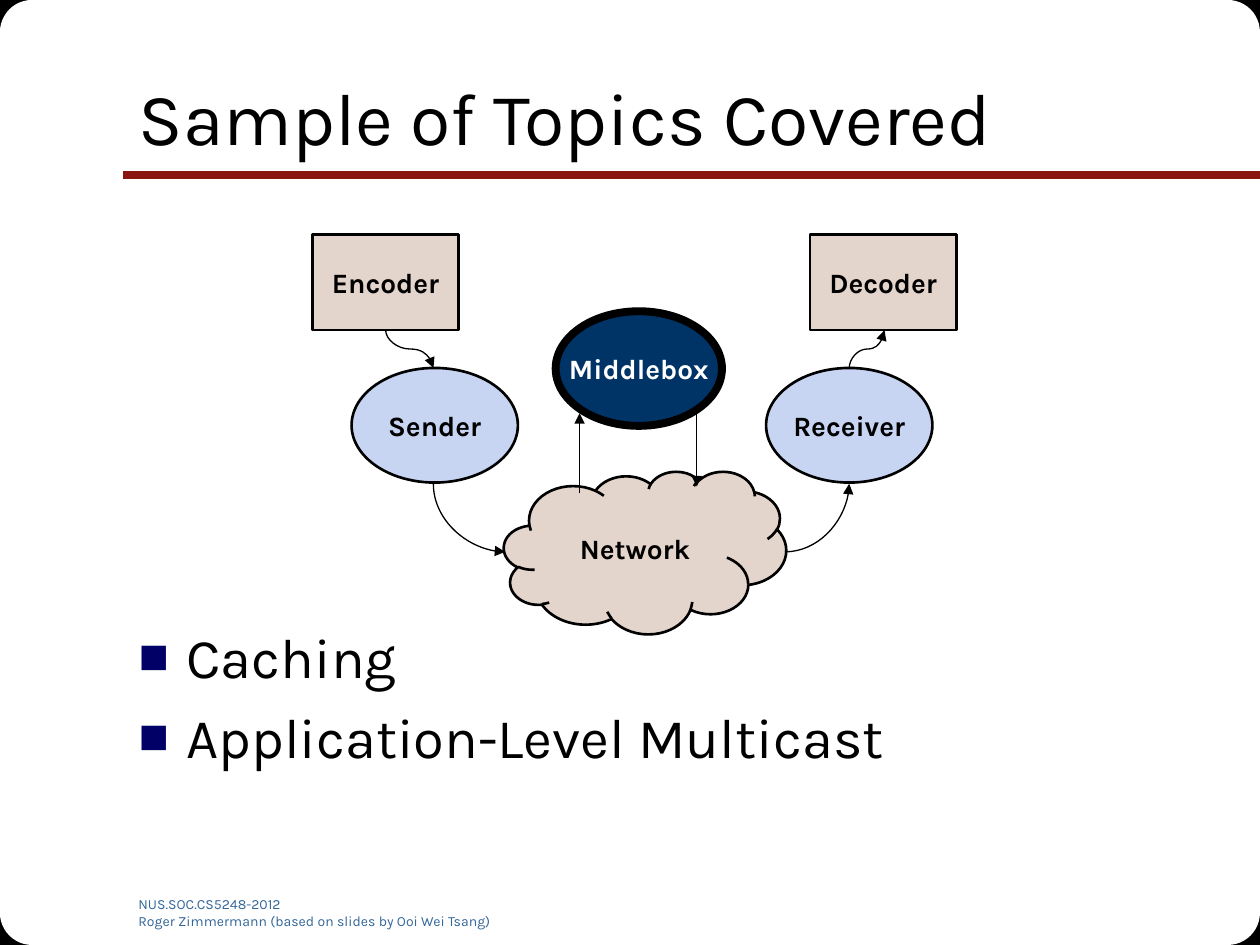
from itertools import product

from lxml.etree import SubElement
from pptx import Presentation
from pptx.dml.color import RGBColor as RGB
from pptx.enum.shapes import MSO_CONNECTOR as CONN, MSO_SHAPE as SHAPE
from pptx.enum.text import MSO_ANCHOR as ANCHOR, MSO_AUTO_SIZE as FIT, PP_ALIGN as ALIGN
from pptx.oxml.ns import qn
from pptx.util import Inches, Pt

W, H = 10, 7.5
LEFT = W * 0.1
FONT = "Karla"
COLORS = {
    "black": "000000", "white": "FFFFFF", "rule": "891411", "footer": "336699",
    "bullet": "000066", "sand": "E3D4CC", "sky": "C7D5F2", "navy": "003366",
}
BOX = (1.16, 0.76)
OVAL = (1.32, 0.91)
CLOUD = (2.24, 1.29)


def color(name):
    return RGB.from_string(COLORS[name])


def place(sp, x, y, w, h):
    sp.left, sp.top, sp.width, sp.height = map(Inches, (x, y, w, h))


def add_run(p, text, size, ink="black", bold=False):
    r = p.add_run()
    r.text = text
    r.font.name, r.font.size, r.font.bold = FONT, Pt(size), bold
    r.font.color.rgb = color(ink)


def add_shape(s, kind, x, y, w, h, fill, line=None):
    sp = s.shapes.add_shape(kind, *map(Inches, (x, y, w, h)))
    sp.shadow.inherit = False
    sp.fill.solid()
    sp.fill.fore_color.rgb = color(fill)
    if line:
        sp.line.color.rgb = color("black")
        sp.line.width = Pt(line)
    else:
        sp.line.fill.background()
    return sp


def add_node(s, kind, x, y, size, text, fill, ink="black", line=1.5):
    sp = add_shape(s, kind, x, y, *size, fill, line)
    tf = sp.text_frame
    tf.word_wrap = kind == SHAPE.CLOUD
    tf.vertical_anchor = ANCHOR.MIDDLE
    p = tf.paragraphs[0]
    p.alignment = ALIGN.CENTER
    add_run(p, text, 16, ink, bold=True)


def add_line(s, start, end, kind=CONN.STRAIGHT, ink="black", width=0.75, arrow=True):
    c = s.shapes.add_connector(kind, *map(Inches, (*start, *end)))
    c.line.color.rgb = color(ink)
    c.line.width = Pt(width)
    if arrow:
        SubElement(c.line._get_or_add_ln(), qn("a:tailEnd"), type="triangle")
    SubElement(c._element.spPr, qn("a:effectLst"))
    return c


def add_curve(s, start, end, preset, upright=True):
    """Curved arrow; an upright one leaves its start vertically."""
    if upright:
        # Lay the span on its side, then turn it back by 270 degrees
        (x1, y1), (x2, y2) = start, end
        cx, cy = (x1 + x2) / 2, (y1 + y2) / 2
        dx, dy = (y1 - y2) / 2, (x2 - x1) / 2
        start, end = (cx - dx, cy - dy), (cx + dx, cy + dy)
    c = add_line(s, start, end, CONN.CURVE)
    c._element.spPr.find(qn("a:prstGeom")).set("prst", preset)
    if upright:
        c._element.spPr.find(qn("a:xfrm")).set("rot", str(270 * 60000))


def add_frame(s):
    # Black corners, softened by white rounded squares
    for kind, side, fill, line in ((SHAPE.RECTANGLE, 0.43, "black", 0.75),
                                   (SHAPE.ROUNDED_RECTANGLE, 1.53, "white", None)):
        for x, y in product((0, W - side), (0, H - side)):
            add_shape(s, kind, x, y, side, side, fill, line)
    add_line(s, (W, 1.39), (0.98, 1.39), ink="rule", width=4.5, arrow=False)


def add_footer(s, lines):
    tf = s.shapes.add_textbox(*map(Inches, (LEFT, 7.06, 3.08, 0.28))).text_frame
    tf.word_wrap = True
    for i, text in enumerate(lines):
        p = tf.add_paragraph() if i else tf.paragraphs[0]
        add_run(p, text, 8, "footer")


def set_title(s, text):
    sp = s.shapes.title
    place(sp, LEFT, 0.3, W * 0.85, 1.25)
    s.shapes._spTree.append(sp._element)  # above the frame
    tf = sp.text_frame
    tf.auto_size, tf.vertical_anchor = FIT.NONE, ANCHOR.MIDDLE
    tf.paragraphs[0].alignment = ALIGN.LEFT
    add_run(tf.paragraphs[0], text, 42)


def set_list(s, items):
    sp = s.placeholders[1]
    place(sp, LEFT, 1.75, W * 0.85, 5.15)
    s.shapes._spTree.append(sp._element)
    tf = sp.text_frame
    tf.auto_size = FIT.NONE
    tf.margin_top = Inches(3.19)  # room for the diagram
    for i, text in enumerate(items):
        p = tf.add_paragraph() if i else tf.paragraphs[0]
        p.space_before = Pt(7.5)
        pPr = p._p.get_or_add_pPr()
        pPr.set("marL", str(Inches(0.38)))
        pPr.set("indent", str(-Inches(0.38)))
        clr = SubElement(pPr, qn("a:buClr"))
        SubElement(clr, qn("a:srgbClr"), val=COLORS["bullet"])
        SubElement(pPr, qn("a:buSzPct"), val="90000")
        SubElement(pPr, qn("a:buFont"), typeface="Arial")
        SubElement(pPr, qn("a:buChar"), char="■")
        add_run(p, text, 32)


def add_diagram(s):
    # Nodes
    add_node(s, SHAPE.CLOUD, 4, 3.74, CLOUD, "Network", "sand")
    add_node(s, SHAPE.RECTANGLE, 2.48, 1.86, BOX, "Encoder", "sand")
    add_node(s, SHAPE.RECTANGLE, 6.43, 1.86, BOX, "Decoder", "sand")
    add_node(s, SHAPE.OVAL, 2.79, 2.92, OVAL, "Sender", "sky")
    add_node(s, SHAPE.OVAL, 6.08, 2.92, OVAL, "Receiver", "sky")
    add_node(s, SHAPE.OVAL, 4.41, 2.47, OVAL, "Middlebox", "navy", "white", 4.5)
    # Flow from encoder to decoder
    add_curve(s, (3.06, 2.62), (3.44, 2.92), "curvedConnector3")
    add_curve(s, (3.44, 3.84), (4.01, 4.38), "curvedConnector2")
    add_line(s, (4.6, 3.91), (4.6, 3.28))
    add_line(s, (5.53, 3.28), (5.53, 3.86))
    add_curve(s, (6.23, 4.38), (6.74, 3.84), "curvedConnector2", upright=False)
    add_curve(s, (6.74, 2.92), (7.02, 2.62), "curvedConnector3")


def main():
    prs = Presentation()
    prs.slide_width, prs.slide_height = Inches(W), Inches(H)
    s = prs.slides.add_slide(prs.slide_layouts[1])
    add_frame(s)
    add_footer(s, ("NUS.SOC.CS5248-2012",
                   "Roger Zimmermann (based on slides by Ooi Wei Tsang)"))
    set_title(s, "Sample of Topics Covered")
    set_list(s, ("Caching", "Application-Level Multicast"))
    add_diagram(s)
    prs.save("out.pptx")


if __name__ == "__main__":
    main()
